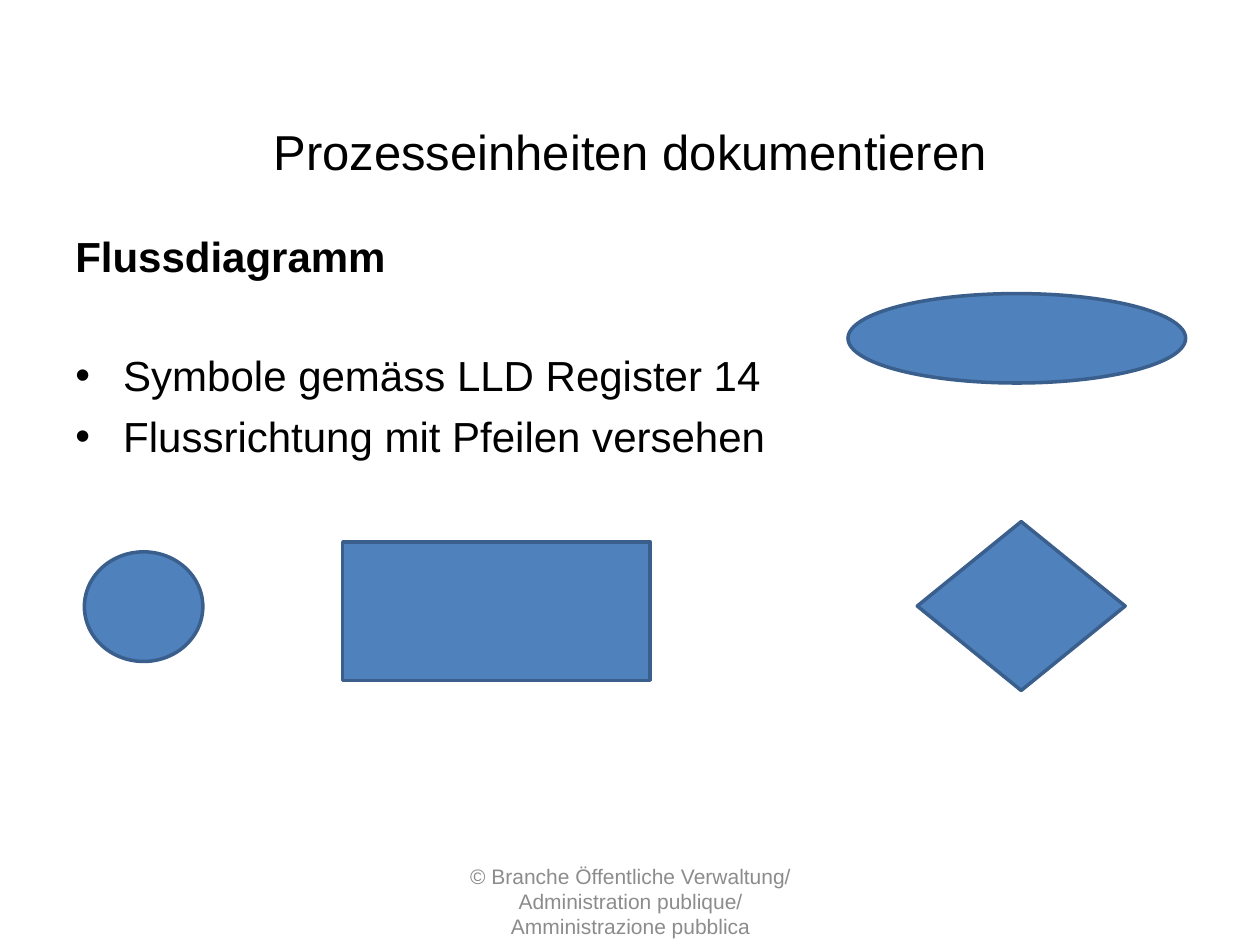
from lxml import etree
from pptx import Presentation
from pptx.dml.color import RGBColor
from pptx.enum.shapes import MSO_SHAPE
from pptx.enum.text import MSO_ANCHOR, PP_ALIGN
from pptx.oxml.ns import qn
from pptx.util import Inches, Pt

BLACK = RGBColor(0x00, 0x00, 0x00)
GREY = RGBColor(0x8C, 0x8C, 0x8C)
BLUE = RGBColor(0x4F, 0x81, 0xBD)
DARK_BLUE = RGBColor(0x3A, 0x5F, 0x8C)

prs = Presentation()
prs.slide_width, prs.slide_height = Inches(10), Inches(7.5)
slide = prs.slides.add_slide(prs.slide_layouts[6])


def add_text_frame(left, top, width, height, anchor):
    box = slide.shapes.add_textbox(Inches(left), Inches(top), Inches(width), Inches(height))
    box.text_frame.word_wrap = True
    box.text_frame.vertical_anchor = anchor
    return box.text_frame


def style_font(paragraph, size, color, bold=False):
    for name, value in {"name": "Arial", "size": Pt(size), "bold": bold}.items():
        setattr(paragraph.font, name, value)
    paragraph.font.color.rgb = color


# Title and footer
centred_texts = [
    ("Prozesseinheiten dokumentieren", (0.5, 0.84, 9, 0.71), 28, BLACK),
    ("© Branche Öffentliche Verwaltung/ Administration publique/ Amministrazione pubblica",
     (3.42, 6.95, 3.17, 0.4), 12, GREY),
]
for text, position, size, color in centred_texts:
    paragraph = add_text_frame(*position, MSO_ANCHOR.MIDDLE).paragraphs[0]
    paragraph.text = text
    paragraph.alignment = PP_ALIGN.CENTER
    style_font(paragraph, size, color)

# Heading with bullet points
body = add_text_frame(0.5, 1.78, 9, 4.92, MSO_ANCHOR.TOP)
heading = body.paragraphs[0]
heading.text = "Flussdiagramm"
style_font(heading, 24, BLACK, bold=True)

bullet_points = [
    ("Symbole gemäss LLD Register 14", 39.5),
    ("Flussrichtung mit Pfeilen versehen", 6),
]
for text, space_before in bullet_points:
    point = body.add_paragraph()
    point.text = text
    point.space_before = Pt(space_before)
    properties = point._p.get_or_add_pPr()
    properties.set("marL", str(Inches(0.38)))
    properties.set("indent", str(Inches(-0.38)))
    etree.SubElement(properties, qn("a:buFont"), typeface="Arial")
    etree.SubElement(properties, qn("a:buChar"), char="•")
    style_font(point, 24, BLACK)

# Flowchart symbols
symbols = [
    (MSO_SHAPE.OVAL, 6.73, 2.33, 2.68, 0.71),
    (MSO_SHAPE.FLOWCHART_DECISION, 7.28, 4.14, 1.65, 1.34),
    (MSO_SHAPE.RECTANGLE, 2.72, 4.3, 2.44, 1.1),
    (MSO_SHAPE.FLOWCHART_CONNECTOR, 0.67, 4.38, 0.94, 0.87),
]
for kind, *position in symbols:
    symbol = slide.shapes.add_shape(kind, *map(Inches, position))
    symbol.shadow.inherit = False
    symbol.fill.solid()
    symbol.fill.fore_color.rgb = BLUE
    symbol.line.color.rgb = DARK_BLUE
    symbol.line.width = Pt(2)

prs.save("out.pptx")
